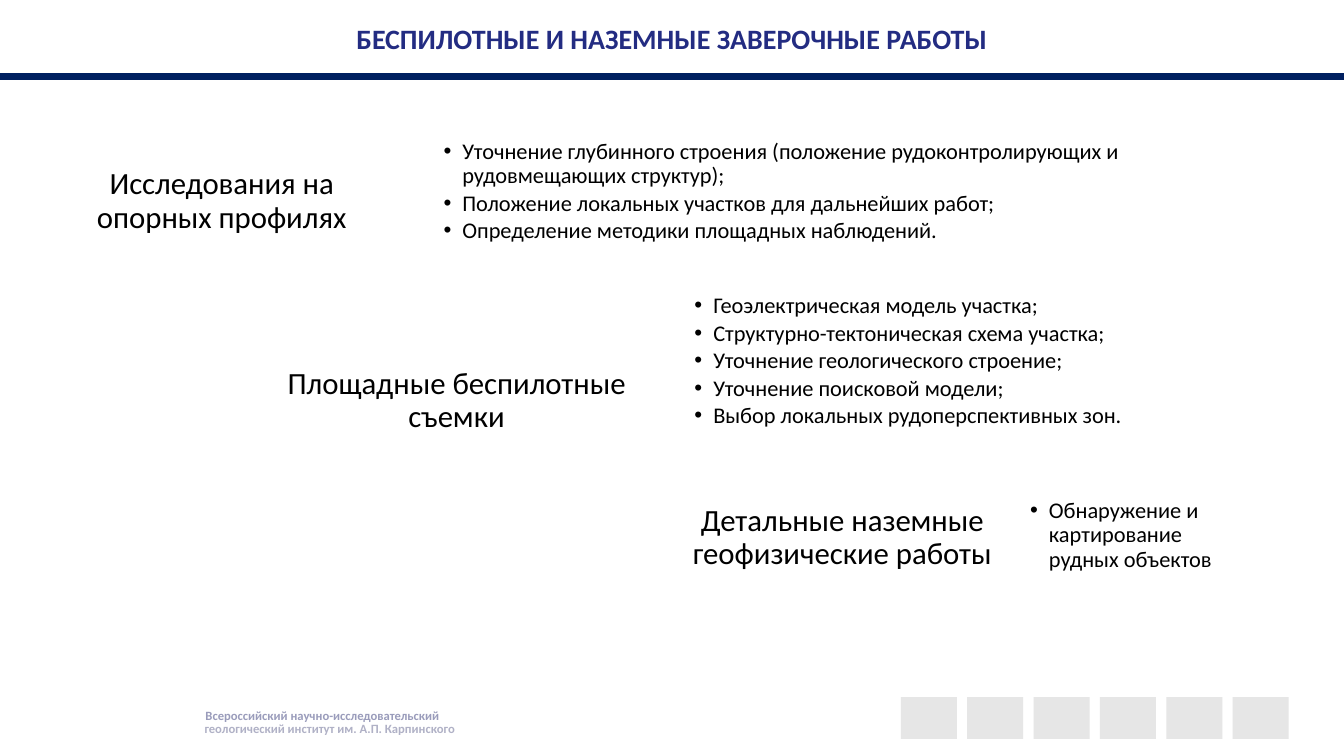
from lxml.etree import SubElement
from pptx import Presentation
from pptx.dml.color import RGBColor
from pptx.enum.shapes import MSO_CONNECTOR, MSO_SHAPE
from pptx.enum.text import MSO_ANCHOR, MSO_AUTO_SIZE, PP_ALIGN
from pptx.oxml.ns import qn
from pptx.util import Pt

HUES = {
    "title": "232C82", "rule": "002060", "text": "000000",
    "tile": "D9D9D9", "upper": "9A9CBB", "lower": "B0B1C6",
}
STAGES = [
    ("Исследования на опорных профилях", (35.3, 100, 246.2, 88),
     ["Уточнение глубинного строения (положение рудоконтролирующих и рудовмещающих структур);",
      "Положение локальных участков для дальнейших работ;",
      "Определение методики площадных наблюдений."],
     (311.8, 106.5, 527.8, 61)),
    ("Площадные беспилотные съемки", (183.6, 242.6, 285.1, 88),
     ["Геоэлектрическая модель участка;",
      "Структурно-тектоническая схема участка;",
      "Уточнение геологического строение;",
      "Уточнение поисковой модели;",
      "Выбор локальных рудоперспективных зон."],
     (491, 201, 337.7, 114.5)),
    ("Детальные наземные геофизические работы", (488.2, 340.6, 226.8, 88),
     ["Обнаружение и картирование рудных объектов"],
     (730.8, 343.4, 146.2, 78.5)),
]


def write(frame, lines, size=16, hue="text", bold=False, align=PP_ALIGN.LEFT,
          inset=None, wrap=True, lead=1, gap=0, dot=False, anchor=MSO_ANCHOR.MIDDLE):
    """Fill a text frame with formatted paragraphs."""
    frame.word_wrap = wrap
    frame.auto_size = MSO_AUTO_SIZE.NONE
    frame.vertical_anchor = anchor
    if inset is not None:
        frame.margin_left = frame.margin_right = Pt(inset)
        frame.margin_top = frame.margin_bottom = Pt(inset)
    for i, line in enumerate(lines):
        para = frame.paragraphs[0] if i == 0 else frame.add_paragraph()
        para.text = line
        para.alignment = align
        para.line_spacing = lead
        para.space_before = Pt(0)
        para.space_after = Pt(gap)
        if dot:
            props = para._p.get_or_add_pPr()
            props.set("marL", str(Pt(13.5)))
            props.set("indent", str(Pt(-13.5)))
            SubElement(props, qn("a:buFont")).set("typeface", "Arial")
            SubElement(props, qn("a:buChar")).set("char", "•")
        font = para.runs[0].font
        font.name, font.size, font.bold = "Calibri", Pt(size), bold
        font.color.rgb = RGBColor.from_string(HUES[hue])


class Deck:
    """Hold the style and the current slide."""

    def __init__(self):
        """Start a wide deck with one slide."""
        self.file = Presentation()
        self.file.slide_width, self.file.slide_height = Pt(960), Pt(540)
        self.slide = self.file.slides.add_slide(self.file.slide_layouts[4])
        self.shapes = self.slide.shapes

    def place(self, shape, box):
        """Move a shape to a box."""
        shape.left, shape.top, shape.width, shape.height = map(Pt, box)

    def title(self, text, box):
        """Set the slide title."""
        self.place(self.shapes.title, box)
        write(self.shapes.title.text_frame, [text], size=20, hue="title",
              bold=True, align=PP_ALIGN.CENTER)

    def list(self, slot, lines, box):
        """Put a bullet list in a body placeholder."""
        shape = self.slide.placeholders[slot]
        self.place(shape, box)
        write(shape.text_frame, lines, inset=5, lead=0.9, gap=2.4, dot=True)

    def label(self, text, box, **form):
        """Add a text box."""
        shape = self.shapes.add_textbox(*map(Pt, box))
        write(shape.text_frame, [text], **form)

    def tile(self, box):
        """Add a pale see-through square."""
        shape = self.shapes.add_shape(MSO_SHAPE.RECTANGLE, *map(Pt, box))
        shape.shadow.inherit = False
        shape.line.fill.background()
        shape.fill.solid()
        shape.fill.fore_color.rgb = RGBColor.from_string(HUES["tile"])
        tint = shape.fill._xPr.find(qn("a:solidFill"))[0]
        SubElement(tint, qn("a:alpha")).set("val", "65000")

    def rule(self, top, width):
        """Add a line across the slide."""
        line = self.shapes.add_connector(
            MSO_CONNECTOR.STRAIGHT, Pt(0), Pt(top), Pt(width), Pt(top))
        line.line.color.rgb = RGBColor.from_string(HUES["rule"])
        line.line.width = Pt(4.5)
        SubElement(line._element.spPr, qn("a:effectLst"))

    def trim(self):
        """Remove placeholders left empty."""
        for shape in list(self.slide.placeholders):
            if not shape.text_frame.text:
                shape._element.getparent().remove(shape._element)


def main():
    """Build and save the slide."""
    deck = Deck()
    foot = {"size": 9, "bold": True, "wrap": False, "anchor": MSO_ANCHOR.TOP}
    deck.label("геологический институт им. А.П. Карпинского",
               (139, 511.2, 195, 18), hue="lower", **foot)
    deck.label("Всероссийский научно-исследовательский",
               (139.7, 501.8, 183.6, 18), hue="upper", **foot)
    for i in range(6):
        deck.tile((643.5 + 47.4 * i, 498, 40, 29.8))
    deck.title("БЕСПИЛОТНЫЕ И НАЗЕМНЫЕ ЗАВЕРОЧНЫЕ РАБОТЫ", (0, 0, 960, 54.7))
    deck.rule(54.7, 960)
    for slot, (name, spot, lines, box) in enumerate(STAGES, 1):
        deck.label(name, spot, size=22, align=PP_ALIGN.CENTER, inset=6.5, lead=0.9)
        deck.list(slot, lines, box)
    deck.trim()
    deck.file.save("out.pptx")


if __name__ == "__main__":
    main()
